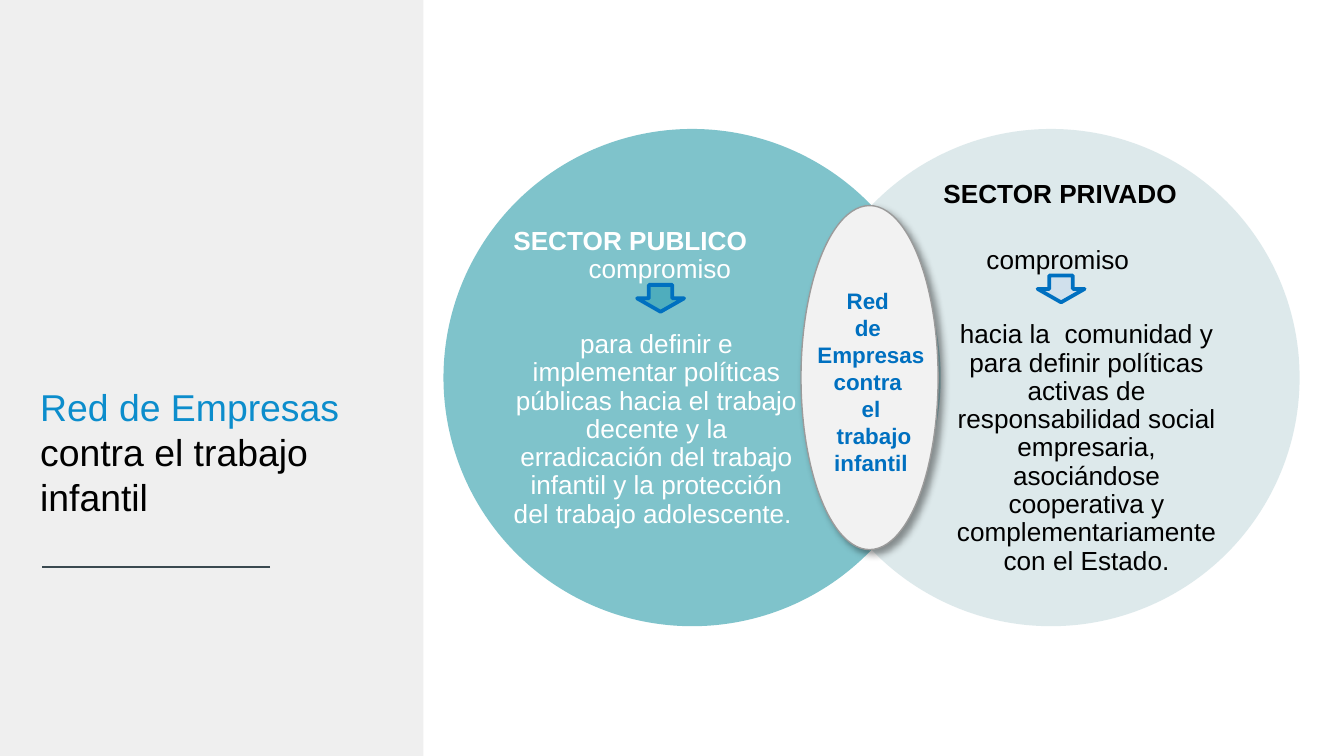
from dataclasses import dataclass

from lxml.etree import SubElement
from pptx import Presentation
from pptx.dml.color import RGBColor
from pptx.enum.shapes import MSO_CONNECTOR as Connector, MSO_SHAPE as Shape
from pptx.enum.text import MSO_ANCHOR as Anchor, PP_ALIGN as Align
from pptx.oxml.ns import qn
from pptx.util import Inches, Pt


@dataclass(frozen=True)
class Theme:
    font: str = "Arial"
    panel: str = "EFEFEF"
    title: str = "0C8DCC"
    black: str = "000000"
    white: str = "FFFFFF"
    rule: str = "3A4950"
    public: str = "008998"
    private: str = "BCD4D9"
    overlap: str = "F2F2F2"
    overlap_line: str = "9B9B9B"
    accent: str = "0070C0"
    public_arrow: str = "4FADBD"
    private_arrow: str = "D0E0EC"
    title_size: int = 20
    sector_size: int = 14
    overlap_size: int = 12


THEME = Theme()
SLIDE_WIDTH = 10
SLIDE_HEIGHT = SLIDE_WIDTH * 9 / 16
CIRCLE_TOP, CIRCLE_SIZE = 0.96, 3.7
SECTOR_TOP, SECTOR_WIDTH, SECTOR_HEIGHT = 1.4, 2.13, 2.83


def rgb(value):
    return RGBColor.from_string(value)


def add_figure(slide, kind, box, fill, line=None, line_width=0.75, opacity=None):
    shape = slide.shapes.add_shape(kind, *map(Inches, box))
    shape.shadow.inherit = False
    shape.fill.solid()
    shape.fill.fore_color.rgb = rgb(fill)
    if opacity is not None:
        color = shape.fill._xPr.find(qn("a:solidFill"))[0]
        SubElement(color, qn("a:alpha"), val=str(opacity * 1000))
    if line:
        shape.line.color.rgb = rgb(line)
        shape.line.width = Pt(line_width)
    else:
        shape.line.fill.background()
    return shape


def add_soft_shadow(shape):
    effects = shape._element.spPr.find(qn("a:effectLst"))
    shadow = SubElement(effects, qn("a:outerShdw"), blurRad=str(Pt(4)),
                        dist=str(Pt(3)), dir=str(45 * 60000), algn="tl")
    color = SubElement(shadow, qn("a:srgbClr"), val=THEME.black)
    SubElement(color, qn("a:alpha"), val="40000")


def add_text_frame(slide, box):
    frame = slide.shapes.add_textbox(*map(Inches, box)).text_frame
    frame.word_wrap = True
    return frame


def add_paragraph(frame, text, size, color, bold=False, align=Align.CENTER):
    first = frame.paragraphs[0]
    paragraph = frame.add_paragraph() if first.runs else first
    paragraph.add_run().text = text
    paragraph.alignment = align
    font = paragraph.font
    font.name, font.size, font.bold = THEME.font, Pt(size), bold
    font.color.rgb = rgb(color)
    return paragraph


def add_title(slide):
    frame = add_text_frame(slide, (0.2, 2.81, 3.01, 1.11))
    paragraph = add_paragraph(frame, "Red de Empresas ", THEME.title_size,
                              THEME.black, align=Align.LEFT)
    paragraph.runs[0].font.color.rgb = rgb(THEME.title)
    paragraph.add_run().text = "contra el trabajo infantil"


def add_rule(slide):
    rule = slide.shapes.add_connector(Connector.STRAIGHT, Inches(2.01), Inches(4.22),
                                      Inches(0.31), Inches(4.22))
    rule.line.color.rgb = rgb(THEME.rule)
    rule.line.width = Pt(0.75)
    SubElement(rule._element.spPr, qn("a:effectLst"))


def add_sector(slide, left, color, heading, commitment, heading_gap=0,
               commitment_align=Align.CENTER, commitment_indent=0):
    frame = add_text_frame(slide, (left, SECTOR_TOP, SECTOR_WIDTH, SECTOR_HEIGHT))
    frame.margin_left = frame.margin_right = frame.margin_top = frame.margin_bottom = 0
    frame.vertical_anchor = Anchor.MIDDLE
    size = THEME.sector_size
    title = add_paragraph(frame, heading, size, color, bold=True, align=Align.LEFT)
    title.space_after = Pt(heading_gap)
    label = add_paragraph(frame, "compromiso", size, color, align=commitment_align)
    label.space_after = Pt(25)
    label._p.get_or_add_pPr().set("marL", str(Inches(commitment_indent)))
    add_paragraph(frame, commitment, size, color)
    for paragraph in frame.paragraphs:
        paragraph.line_spacing = 0.9


def add_overlap(slide):
    oval = add_figure(slide, Shape.OVAL, (5.96, 1.53, 1.02, 2.56),
                      THEME.overlap, THEME.overlap_line)
    add_soft_shadow(oval)
    frame = add_text_frame(slide, (5.84, 2.09, 1.28, 1.51))
    for text in ("Red ", "de ", "Empresas contra ", "el", " trabajo infantil"):
        add_paragraph(frame, text, THEME.overlap_size, THEME.accent, bold=True)


def add_down_arrow(slide, left, top, fill):
    add_figure(slide, Shape.DOWN_ARROW, (left, top, 0.35, 0.2), fill,
               THEME.accent, line_width=2)


def main():
    presentation = Presentation()
    presentation.slide_width = Inches(SLIDE_WIDTH)
    presentation.slide_height = Inches(SLIDE_HEIGHT)
    slide = presentation.slides.add_slide(presentation.slide_layouts[6])

    add_figure(slide, Shape.RECTANGLE, (0, 0, 3.15, SLIDE_HEIGHT), THEME.panel)
    add_title(slide)
    add_rule(slide)

    for left, fill in ((3.3, THEME.public), (5.97, THEME.private)):
        add_figure(slide, Shape.OVAL, (left, CIRCLE_TOP, CIRCLE_SIZE, CIRCLE_SIZE),
                   fill, opacity=50)
    add_sector(slide, 3.82, THEME.white, "SECTOR PUBLICO",
               "para definir e implementar políticas públicas hacia el trabajo "
               "decente y la erradicación del trabajo infantil y la protección "
               "del trabajo adolescente. ", commitment_indent=0.05)
    add_sector(slide, 7.02, THEME.black, "SECTOR PRIVADO",
               "hacia la  comunidad y para definir políticas activas de "
               "responsabilidad social empresaria, asociándose cooperativa y "
               "complementariamente con el Estado.", heading_gap=20,
               commitment_align=Align.LEFT, commitment_indent=0.32)

    add_overlap(slide)
    add_down_arrow(slide, 4.74, 2.12, THEME.public_arrow)
    add_down_arrow(slide, 7.72, 2.05, THEME.private_arrow)
    presentation.save("out.pptx")


if __name__ == "__main__":
    main()
